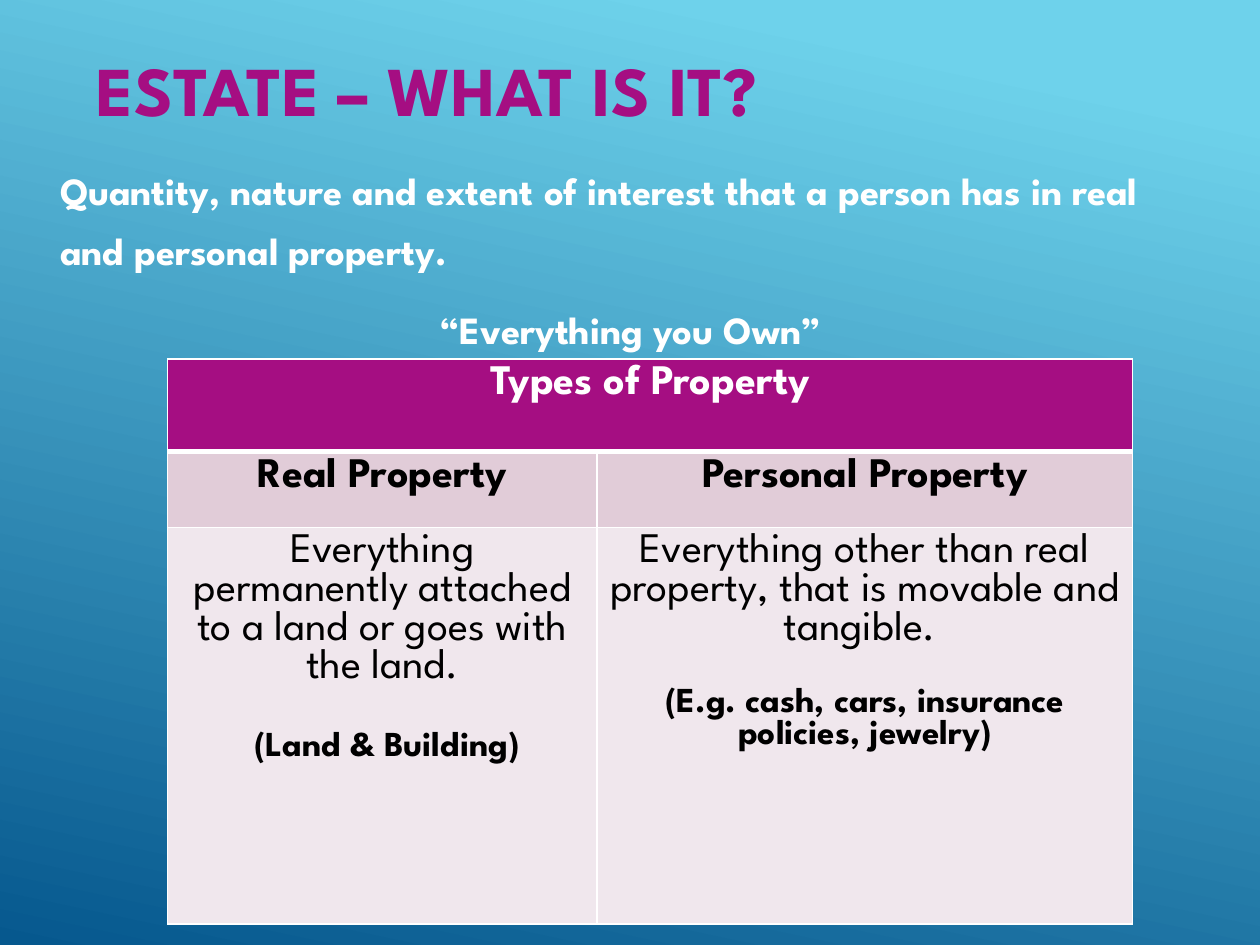
from dataclasses import dataclass

from lxml.etree import fromstring
from pptx import Presentation
from pptx.dml.color import RGBColor
from pptx.enum.text import MSO_ANCHOR, PP_ALIGN
from pptx.oxml.ns import nsdecls
from pptx.util import Inches, Pt

WIDE, HIGH = Inches(10), Inches(7.5)
FONT = "League Spartan"
HEX = {
    "sky": "6ED2EB", "sea": "06588E", "plum": "A50E82", "white": "FFFFFF",
    "black": "000000", "rose": "E1CCD8", "pale": "F0E7ED",
}


@dataclass
class Para:
    text: str
    size: float = 24
    bold: bool = True
    color: str = "black"
    align: PP_ALIGN = PP_ALIGN.CENTER
    before: float = 0
    after: float = 0
    line: float = 1.0


@dataclass
class Box:
    left: float
    top: float
    width: float
    height: float
    paras: list[Para]
    anchor: MSO_ANCHOR = MSO_ANCHOR.TOP


@dataclass
class Cell:
    row: int
    col: int
    fill: str
    paras: list[Para]


LEFT = PP_ALIGN.LEFT
BOXES = [
    Box(0.067, 0.023, 0.875, 0.122,
        [Para("ESTATE – WHAT IS IT?", 40, color="plum", align=LEFT)],
        MSO_ANCHOR.BOTTOM),
    Box(0.038, 0.156, 0.933, 0.21, [
        Para("Quantity, nature and extent of interest that a person has "
             "in real and personal property.", 22, color="white", align=LEFT,
             after=6, line=1.3),
        Para("“Everything you Own” ", 22, color="white", before=4.4,
             after=6, line=1.3),
    ]),
]
COLS = (0.341, 0.425)
ROWS = (0.098, 0.08, 0.42)
CELLS = [
    Cell(0, 0, "plum", [Para("Types of Property", color="white")]),
    Cell(1, 0, "rose", [Para("Real Property")]),
    Cell(1, 1, "rose", [Para("Personal Property")]),
    Cell(2, 0, "pale", [
        Para("Everything permanently attached to a land or goes with "
             "the land.", bold=False),
        Para(" (Land & Building)", 20, before=25),
    ]),
    Cell(2, 1, "pale", [
        Para("Everything other than real property, that is movable and "
             "tangible. ", bold=False),
        Para("(E.g. cash, cars, insurance policies, jewelry)", 20, before=22),
    ]),
]


def tint(name: str) -> RGBColor:
    return RGBColor.from_string(HEX[name])


def write(frame, paras: list[Para]) -> None:
    frame.word_wrap = True
    frame.text = "\n".join(item.text for item in paras)
    for para, item in zip(frame.paragraphs, paras):
        para.alignment = item.align
        para.space_before, para.space_after = Pt(item.before), Pt(item.after)
        para.line_spacing = item.line
        for run in para.runs:
            font = run.font
            font.name, font.size, font.bold = FONT, Pt(item.size), item.bold
            font.color.rgb = tint(item.color)


def rule(cell, sides: dict[str, float]) -> None:
    """Draw white borders, given as side letter and width in points."""
    props = cell._tc.get_or_add_tcPr()
    for spot, (side, width) in enumerate(sides.items()):
        props.insert(spot, fromstring(
            f'<a:ln{side} {nsdecls("a")} w="{Pt(width)}"><a:solidFill>'
            f'<a:srgbClr val="{HEX["white"]}"/></a:solidFill></a:ln{side}>'))


def add_box(slide, box: Box) -> None:
    shape = slide.shapes.add_textbox(
        int(box.left * WIDE), int(box.top * HIGH),
        int(box.width * WIDE), int(box.height * HIGH))
    shape.text_frame.vertical_anchor = box.anchor
    write(shape.text_frame, box.paras)


def add_grid(slide) -> None:
    table = slide.shapes.add_table(
        len(ROWS), len(COLS), int(0.133 * WIDE), int(0.38 * HIGH),
        int(sum(COLS) * WIDE), int(sum(ROWS) * HIGH)).table
    for col, share in zip(table.columns, COLS):
        col.width = int(share * WIDE)
    for row, share in zip(table.rows, ROWS):
        row.height = int(share * HIGH)
    table.cell(0, 0).merge(table.cell(0, 1))
    for item in CELLS:
        cell = table.cell(item.row, item.col)
        cell.fill.solid()
        cell.fill.fore_color.rgb = tint(item.fill)
        write(cell.text_frame, item.paras)
    for r in range(len(ROWS)):
        for c in range(len(COLS)):
            rule(table.cell(r, c), {"L": 1, "R": 1, "T": 3 if r == 1 else 1,
                                    "B": 3 if r == 0 else 1})


def paint(slide) -> None:
    fill = slide.background.fill
    fill.gradient()
    fill.gradient_angle = 360 - 102
    for stop, (place, name) in zip(fill.gradient_stops,
                                   ((0.1, "sky"), (1, "sea"))):
        stop.position = place
        stop.color.rgb = tint(name)


def main() -> None:
    deck = Presentation()
    deck.slide_width, deck.slide_height = WIDE, HIGH
    slide = deck.slides.add_slide(deck.slide_layouts[6])
    paint(slide)
    for box in BOXES:
        add_box(slide, box)
    add_grid(slide)
    deck.save("out.pptx")


if __name__ == "__main__":
    main()
